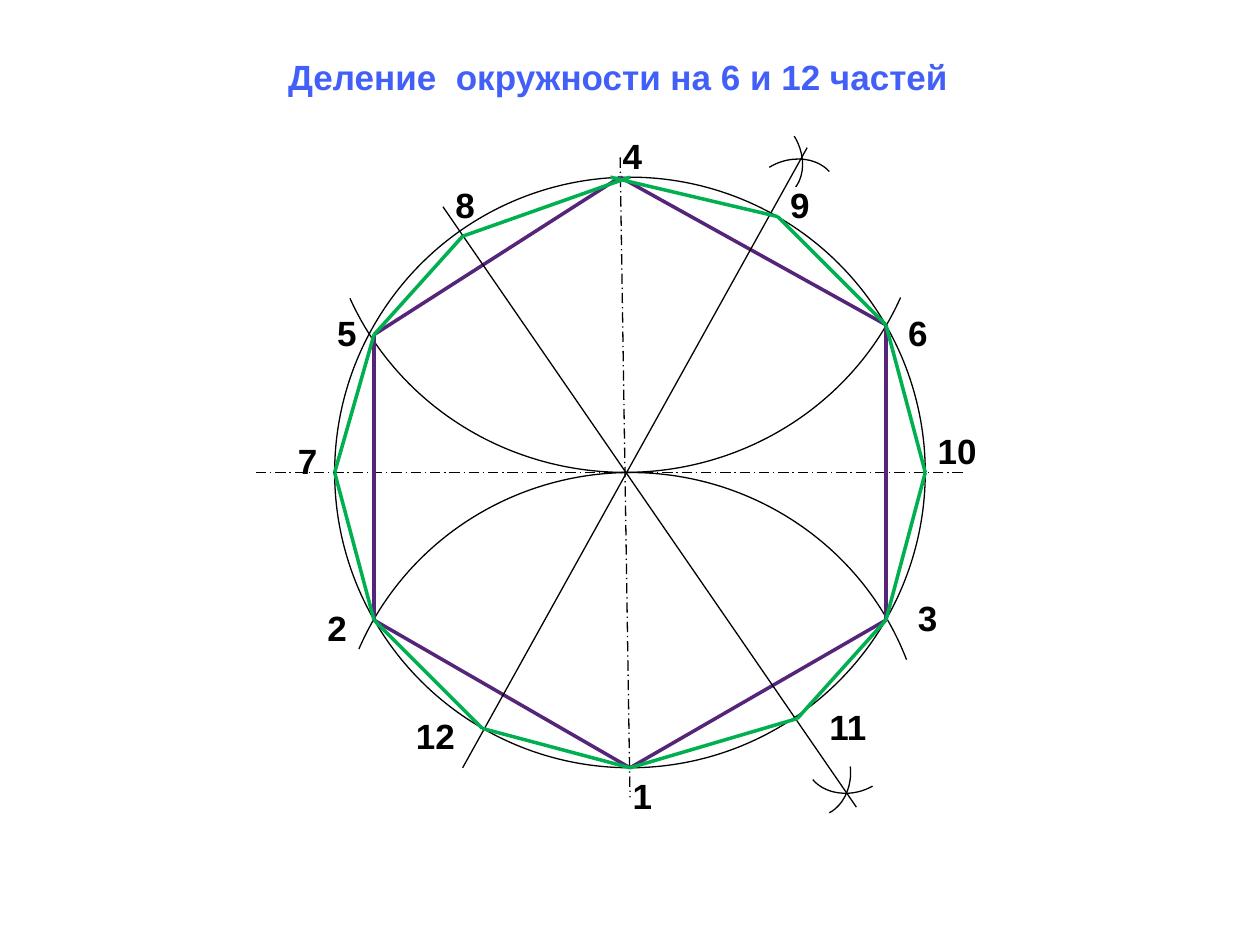
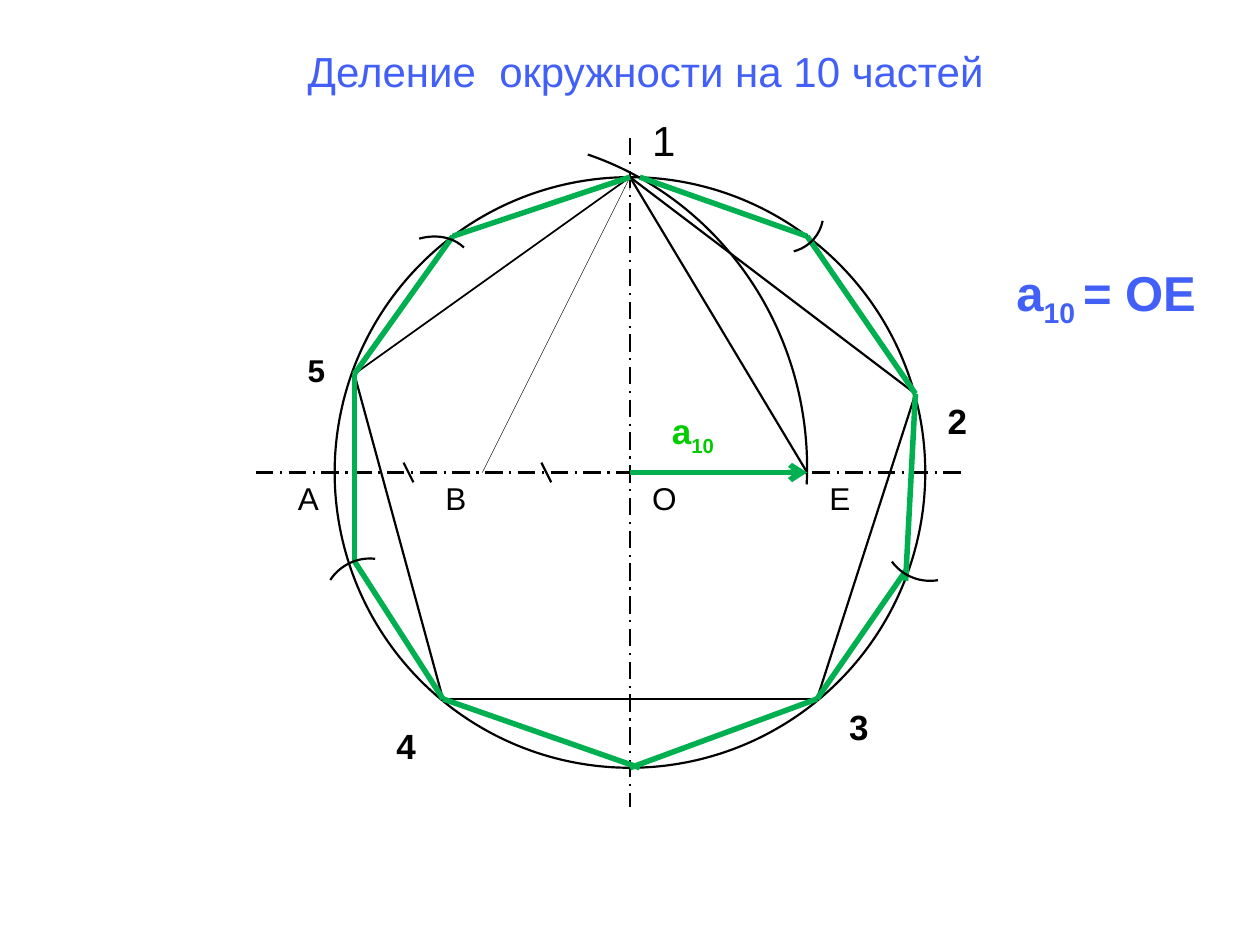
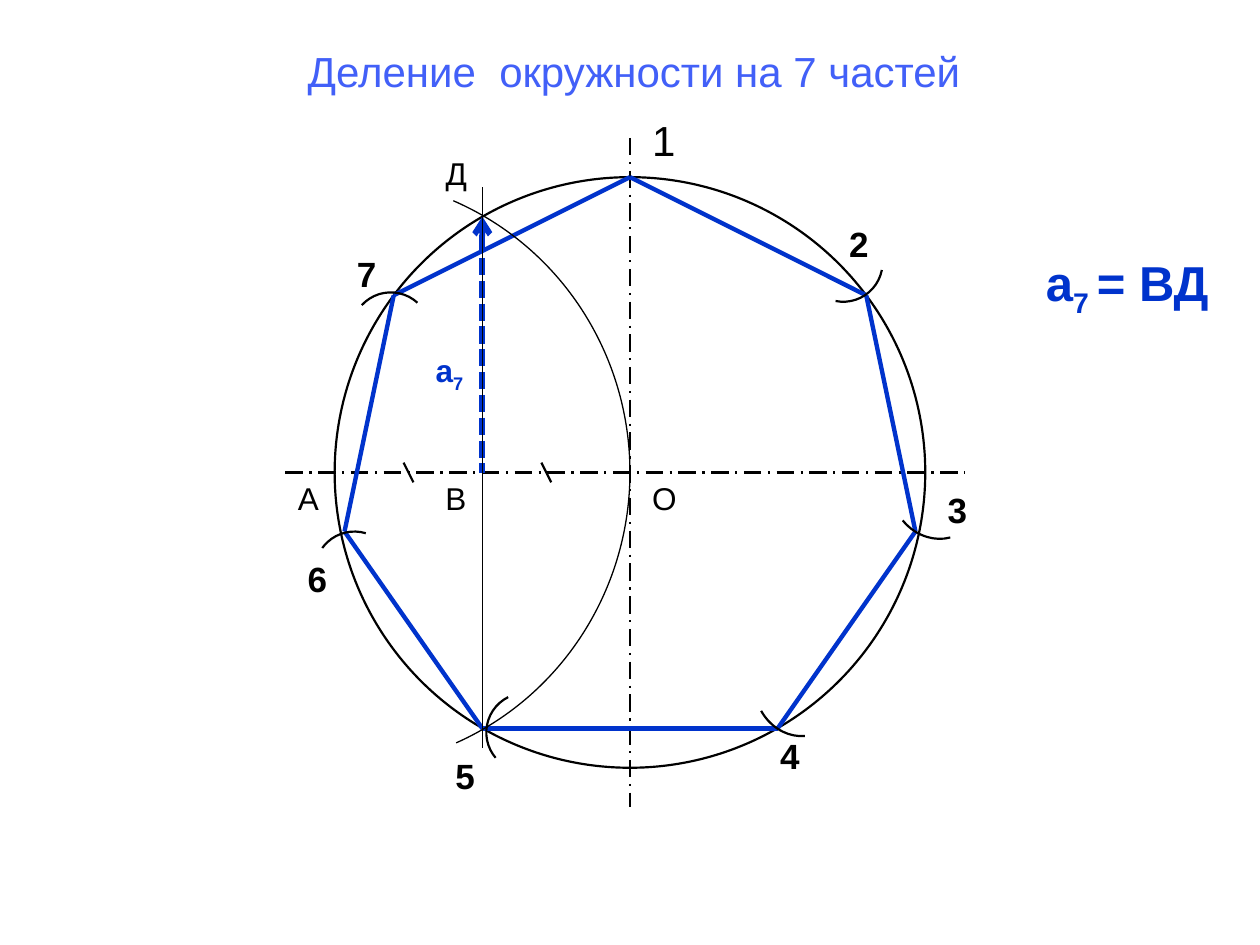
from itertools import pairwise

from lxml.etree import SubElement as Sub
from pptx import Presentation
from pptx.dml.color import RGBColor
from pptx.enum.dml import MSO_LINE as Dash
from pptx.enum.shapes import MSO_CONNECTOR as Conn, MSO_SHAPE as Kind
from pptx.oxml.ns import qn
from pptx.util import Pt

BLACK = RGBColor(0x00, 0x00, 0x00)
TITLE = RGBColor(0x42, 0x60, 0xF8)
PURPLE = RGBColor(0x55, 0x25, 0x79)
GREEN = RGBColor(0x00, 0xB0, 0x50)
LIME = RGBColor(0x00, 0xCC, 0x00)
BLUE = RGBColor(0x00, 0x33, 0xCC)
FONT = "Arial"
RADIUS = 30
STEP = 45 / 8
BOX = (191.25, 101.25)


class Board:
    """A drawing whose grid starts at the centre of the circle in its box."""

    def __init__(self, deck, box):
        """Add a blank slide and find the centre of the circle."""
        self.shapes = deck.slides.add_slide(deck.slide_layouts[6]).shapes
        self.left, self.top = (side + RADIUS * STEP for side in box)

    def spot(self, x, y):
        """Turn a grid point into a place on the slide."""
        return Pt(self.left + x * STEP), Pt(self.top + y * STEP)

    def line(self, start, end, width=1.25, color=BLACK, dash=None, tip=None):
        """Draw a line, with an arrow at headEnd or tailEnd if asked."""
        link = self.shapes.add_connector(
            Conn.STRAIGHT, *self.spot(*start), *self.spot(*end))
        link.line.color.rgb = color
        link.line.width = Pt(width)
        if dash:
            link.line.dash_style = dash
        props = link._element.spPr
        if tip:
            Sub(props.find(qn("a:ln")), qn(f"a:{tip}"), type="arrow")
        Sub(props, qn("a:effectLst"))

    def chain(self, points, width, color):
        """Join the points one after another."""
        for start, end in pairwise(points):
            self.line(start, end, width, color)

    def curve(self, kind, x, y, wide, high, width):
        """Add an unfilled outline."""
        shape = self.shapes.add_shape(
            kind, *self.spot(x, y), Pt(wide * STEP), Pt(high * STEP))
        shape.shadow.inherit = False
        shape.fill.background()
        shape.line.color.rgb = BLACK
        shape.line.width = Pt(width)
        return shape

    def arc(self, place, turn, start=270, end=0, width=1.25):
        """Add a turned arc between two angles in degrees."""
        shape = self.curve(Kind.ARC, *place, width)
        shape.rotation = turn
        for spot, angle in enumerate((start, end)):
            shape.adjustments[spot] = angle * 0.6

    def text(self, parts, x, y, wide, size=20, bold=True, color=BLACK,
             wrap=True):
        """Write the parts on one line, every second part lowered."""
        box = self.shapes.add_textbox(
            *self.spot(x, y), Pt(wide * STEP), Pt(size * 1.2 + 7.2))
        box.text_frame.word_wrap = wrap
        line = box.text_frame.paragraphs[0]
        for spot, part in enumerate(parts):
            run = line.add_run()
            run.text = part
            run.font.name, run.font.size = FONT, Pt(size)
            run.font.bold, run.font.color.rgb = bold, color
            if spot % 2:
                run._r.get_or_add_rPr().set("baseline", "-25000")

    def marks(self, rows, **style):
        """Write a label for each row of text, place and width."""
        for mark, *place in rows:
            self.text([mark], *place, **style)

    def base(self, axes, width):
        """Draw the circle and its dashed axes."""
        side = 2 * RADIUS
        self.curve(Kind.OVAL, -RADIUS, -RADIUS, side, side, width)
        for start, end in axes:
            self.line(start, end, width, dash=Dash.LONG_DASH_DOT)

    def plan(self, title, west):
        """Draw what the slides with a halved radius share."""
        self.base([((0, -34), (0, 34)), ((west, 0), (34, 0))], 1.25)
        self.text([title], -34, -44, 76, 24, False, TITLE)
        self.text(["1"], 1, -37, 5, 24, False)
        self.marks([("О", 1, 0, 5), ("А", -35, 0, 4), ("В", -20, 0, 4)],
                   size=18, bold=False)
        for x in (-23, -9):
            self.line((x, -1), (x + 1, 1))


def twelve(board):
    """Divide the circle into 6 and 12 parts."""
    board.base([((-1, -32), (0, 33)), ((-38, 0), (34, 0))], 0.75)
    board.text(["Деление  окружности на 6 и 12 частей"], -36, -43, 76,
               color=TITLE)
    board.arc((-29.44, -0.5, 59, 60), 270, 292.73, 69.5, 0.75)
    board.arc((-30, -60, 59, 61), 90, 292.73, 67.08, 0.75)
    for x, y, turn, start in (
            (11.9, -31.74, 341.6, 249.94), (8.96, -35.84, 59.5, 267.29),
            (14.08, 26.62, 85.6, 267.29), (17.79, 25.09, 163.8, 249.94)):
        board.arc((x, y, 9.22, 7.42), turn, start, 344.26, 0.75)
    board.chain([(-26, 15), (-26, -14), (-1, -30), (26, -15), (26, 15),
                 (0, 30), (-26, 15)], 2, PURPLE)
    board.line((-17, 30), (18, -33), 0.75)
    board.line((-19, -27), (23, 34), 0.75)
    board.marks([
        ("1", -1, 30, 5), ("2", -32, 13, 4), ("3", 28, 12, 4),
        ("4", -2, -35, 5), ("5", -31, -17, 4), ("6", 27, -17, 6),
        ("7", -35, -4, 5), ("8", -19, -30, 5), ("9", 15, -30, 5),
        ("10", 30, -5, 7), ("11", 19, 23, 7), ("12", -23, 24, 7)])
    board.chain([(-2, -30), (15, -26), (26, -15), (30, 0), (26, 15),
                 (17, 25), (0, 30), (-15, 26), (-26, 15), (-30, 0),
                 (-26, -14), (-17, -24), (0, -30)], 2, GREEN)


def ten(board):
    """Divide the circle into 10 parts."""
    board.plan("Деление  окружности на 10 частей", -38)
    board.marks([("2", 31, -8, 5), ("3", 21, 23, 4), ("4", -25, 25, 5)])
    board.text(["5"], -34, -13, 5, 18)
    board.text(["Е"], 19, 0, 5, 18, False)
    board.arc((-47, -34, 65, 67), 0, 287.82, 3.03)
    board.line((0, -30), (18, 0))
    board.line((-15, 0), (0, -30), 0.25, tip="tailEnd")
    board.chain([(0, -30), (29, -8), (19, 23), (-19, 23), (-28, -10)],
                1.25, BLACK)
    board.line((0, -30), (-28, -10), 1)
    board.line((0, 0), (18, 0), 3.15, GREEN, tip="tailEnd")
    for points in (
            [(1, -30), (18, -24), (29, -8), (28, 11)],
            [(28, 10), (19, 23), (0, 30)],
            [(1, 30), (-19, 23), (-28, 9), (-28, -10), (-18, -24),
             (0, -30)]):
        board.chain(points, 3.15, GREEN)
    board.arc((11.65, -30.34, 8, 8), 101.2, end=334.5)
    board.arc((25.73, 1.66, 9.6, 9.34), 170.8, end=334.5)
    board.arc((-31.36, 8.83, 9.6, 9.34), 303.6, end=334.5)
    board.arc((-26.5, -23.55, 11.14, 8.96), 323.2, 300.94, 353.89)
    board.text(["а", "10 ", "= ОЕ"], 38, -22, 21.6, 28, color=TITLE,
               wrap=False)
    board.text(["а", "10"], 3, -7, 8, color=LIME, wrap=False)


def seven(board):
    """Divide the circle into 7 parts."""
    board.plan("Деление  окружности на 7 частей", -35)
    board.marks([("2", 21, -26, 5), ("3", 31, 1, 4), ("4", 14, 26, 5),
                 ("5", -19, 28, 5), ("6", -34, 8, 4), ("7", -29, -23, 5)])
    board.text(["Д"], -20, -33, 6, 18, False)
    board.line((-15, -26), (-15, 0), 3.25, BLUE, Dash.SQUARE_DOT, "headEnd")
    board.chain([(0, -30), (24, -18), (29, 6), (15, 26), (-15, 26),
                 (-29, 6), (-24, -18), (0, -30)], 2.5, BLUE)
    for x, y, turn, start in (
            (17.66, -25.34, 101.2, 270), (-32, 6, 286.9, 288.68),
            (-28.29, -18.3, 312.5, 270), (-14.59, 22.4, 243.6, 256.25)):
        board.arc((x, y, 8, 8), turn, start)
    for x, y, turn in ((26.75, -2.56, 141.1), (12.8, 17.41, 151.3)):
        board.arc((x, y, 8.58, 9.47), turn, 290.33)
    board.arc((-59, -30, 59, 60), 0, 292.73, 66.67, 0.75)
    board.line((-15, -29), (-15, 28), 0.75)
    board.text(["а", "7 ", "= ВД"], 41, -23, 19.7, 28, color=BLUE,
               wrap=False)
    board.text(["а", "7"], -21, -13, 5.6, 18, color=BLUE, wrap=False)


def main():
    """Build the three slides and save them."""
    deck = Presentation()
    deck.slide_width, deck.slide_height = Pt(720), Pt(540)
    for draw in (twelve, ten, seven):
        draw(Board(deck, BOX))
    deck.save("out.pptx")


if __name__ == "__main__":
    main()
